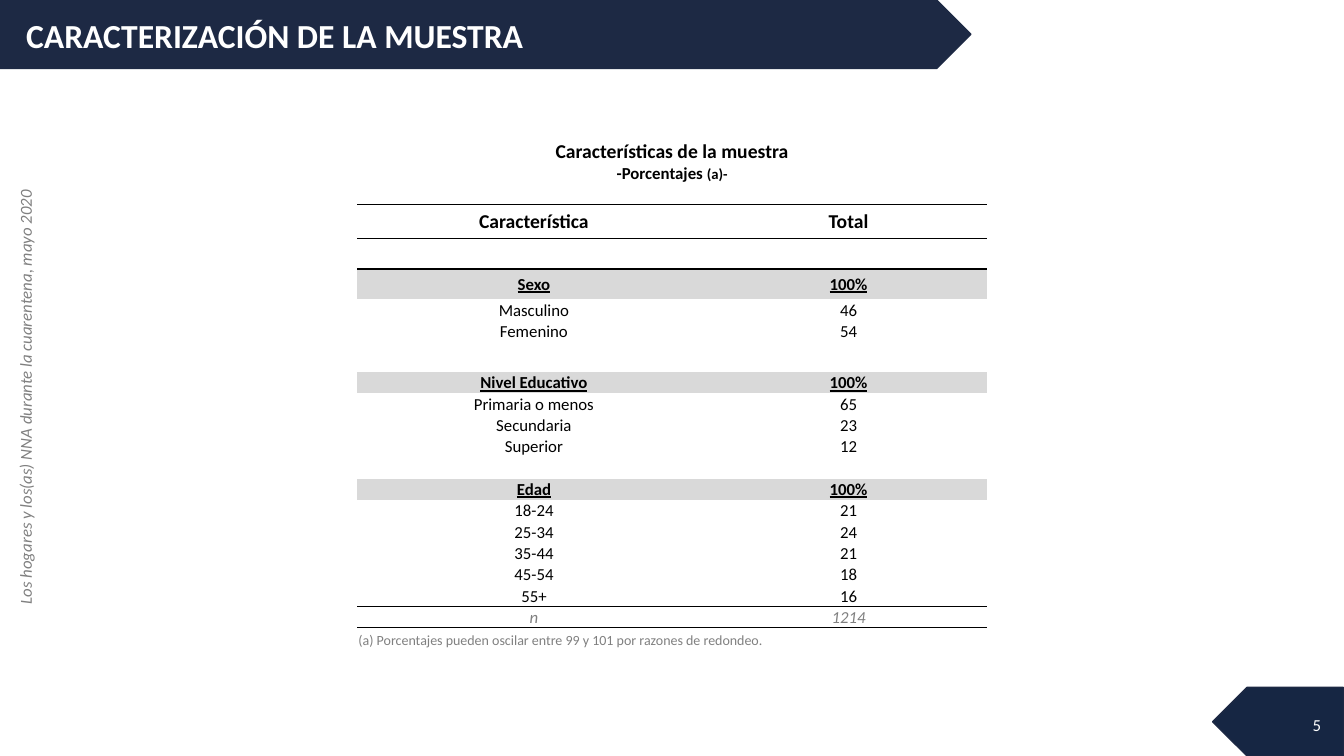
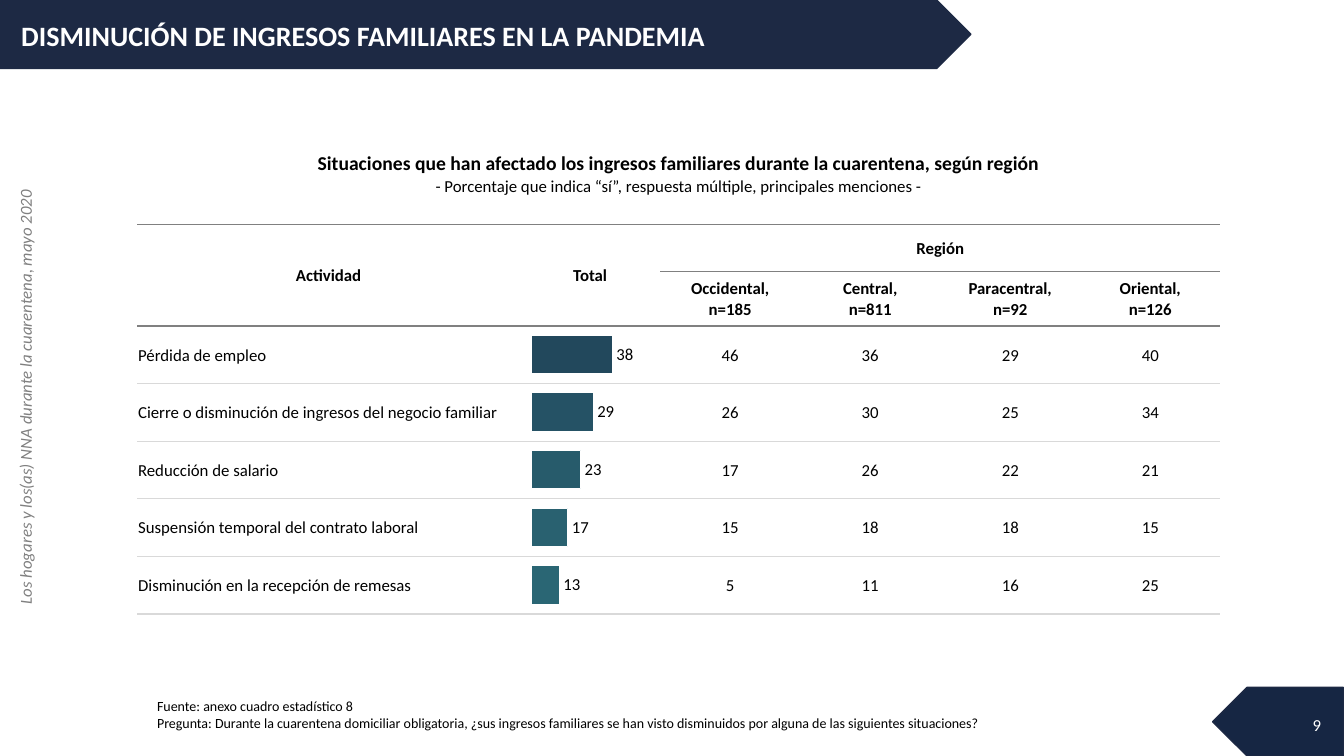
from lxml.etree import SubElement
from pptx import Presentation
from pptx.chart.data import CategoryChartData
from pptx.dml.color import RGBColor
from pptx.enum.chart import XL_CHART_TYPE, XL_LABEL_POSITION
from pptx.enum.shapes import MSO_SHAPE
from pptx.enum.text import MSO_ANCHOR, MSO_AUTO_SIZE, PP_ALIGN
from pptx.oxml import parse_xml
from pptx.oxml.ns import nsdecls, qn
from pptx.util import Inches, Pt

FONT = "Calibri"
NAVY, DEEP_NAVY = "1D2944", "162643"
WHITE, BLACK, GRAY, PALE = "FFFFFF", "000000", "808080", "D9D9D9"
NO_STYLE = "{2D5ABB26-0587-4C30-8999-92F81FD0307C}"
color = RGBColor.from_string

deck = Presentation()
deck.slide_width, deck.slide_height = Inches(13.33), Inches(7.5)


def spot(left, top, width, height):
    """Turn percentages of the slide's size into lengths."""
    across, down = deck.slide_width / 100, deck.slide_height / 100
    return int(left * across), int(top * down), int(width * across), int(height * down)


def write(frame, text, size=12, ink=BLACK, align=PP_ALIGN.LEFT, bold=False, italic=False):
    """Fill a text frame, one paragraph per line of text."""
    frame.text = text
    frame.word_wrap = True
    for para in frame.paragraphs:
        para.alignment = align
        para.font.name, para.font.size = FONT, Pt(size)
        para.font.bold, para.font.italic = bold, italic
        para.font.color.rgb = color(ink)


# Pages: title, title size, left edge, number
layout = deck.slide_layouts[5]
pages = []
for title, size, left, number in [
    ("CARACTERIZACIÓN DE LA MUESTRA", 24, 1.2, "5"),
    ("DISMINUCIÓN DE INGRESOS FAMILIARES EN LA PANDEMIA", 20, 0.83, "9"),
]:
    page = deck.slides.add_slide(layout)
    pages.append(page)
    heading = page.shapes.title
    heading.left, heading.top, heading.width, heading.height = spot(left, 1.33, 70, 6.67)
    write(heading.text_frame, title, size, WHITE, bold=True)
    heading.text_frame.vertical_anchor = MSO_ANCHOR.MIDDLE
    heading.text_frame.auto_size = MSO_AUTO_SIZE.NONE
    box = page.shapes.add_textbox(*spot(76.52, 93.2, 22.51, 5.33))
    write(box.text_frame, number, 12, WHITE, PP_ALIGN.RIGHT)
    box.text_frame.vertical_anchor = MSO_ANCHOR.MIDDLE
sample_page, income_page = pages

# Bands and side caption, moved to the layout that both pages share
shared = []
for place, fill, rotation in [
    ((0, 0, 72.24, 9.07), NAVY, 0),
    ((90.23, 90.93, 9.72, 9.07), DEEP_NAVY, 180),
]:
    band = sample_page.shapes.add_shape(MSO_SHAPE.PENTAGON, *spot(*place))
    band.rotation = rotation
    band.shadow.inherit = False
    band.fill.solid()
    band.fill.fore_color.rgb = color(fill)
    band.line.color.rgb = color(NAVY)
    band.line.width = Pt(1)
    shared.append(band)
caption = sample_page.shapes.add_textbox(*spot(-19.28, 50.53, 42.31, 4))
caption.rotation = 270
write(caption.text_frame, "Los hogares y los(as) NNA durante la cuarentena, mayo 2020",
      12, GRAY, PP_ALIGN.CENTER, italic=True)
shared.append(caption)
for shape in shared:
    layout.shapes._spTree.append(shape._element)

# Tables: rules maps a row to the colour of the line below it
sample_rows = [
    ("Características de la muestra\n-Porcentajes ", ""),
    ("Característica", "Total"),
    ("", ""),
    ("Sexo", "100%"),
    ("Masculino", "46"),
    ("Femenino", "54"),
    ("", ""),
    ("Nivel Educativo", "100%"),
    ("Primaria o menos", "65"),
    ("Secundaria", "23"),
    ("Superior", "12"),
    ("", ""),
    ("Edad", "100%"),
    ("18-24", "21"),
    ("25-34", "24"),
    ("35-44", "21"),
    ("45-54", "18"),
    ("55+", "16"),
    ("n", "1214"),
    ("(a) Porcentajes pueden oscilar entre 99 y 101 por razones de redondeo.", ""),
]
income_rows = [
    ("Situaciones que han afectado los ingresos familiares durante la cuarentena, según región\n"
     "- Porcentaje que indica “sí”, respuesta múltiple, principales menciones -", "", "", "", "", ""),
    ("Actividad", "Total", "Región", "", "", ""),
    ("", "", "Occidental,\nn=185", "Central,\nn=811", "Paracentral,\nn=92", "Oriental,\nn=126"),
    ("Pérdida de empleo", "", "46", "36", "29", "40"),
    ("Cierre o disminución de ingresos del negocio familiar", "", "26", "30", "25", "34"),
    ("Reducción de salario", "", "17", "26", "22", "21"),
    ("Suspensión temporal del contrato laboral", "", "15", "18", "18", "15"),
    ("Disminución en la recepción de remesas", "", "5", "11", "16", "25"),
]
tables = []
for page, left, top, widths, heights, rows, merges, rules in [
    (sample_page, 26.6, 17.6, [26.26, 20.56],
     [9.47, 4.5, 4, 4, 2.82, 2.82, 4] + [2.82] * 12 + [3.2], sample_rows,
     [(0, 0, 0, 1), (19, 0, 19, 1)],
     {0: BLACK, 1: BLACK, 17: BLACK, 18: BLACK}),
    (income_page, 10.2, 19.47, [28.5] + [10.42] * 5,
     [10.2, 6.27, 7.2] + [7.62] * 5, income_rows,
     [(0, 0, 0, 5), (1, 0, 2, 0), (1, 1, 2, 1), (1, 2, 1, 5)],
     {0: GRAY, 1: GRAY, 2: GRAY, 3: PALE, 4: PALE, 5: PALE, 6: PALE, 7: PALE}),
]:
    place = spot(left, top, sum(widths), sum(heights))
    table = page.shapes.add_table(len(rows), len(widths), *place).table
    tables.append(table)
    table._tbl.tblPr.find(qn("a:tableStyleId")).text = NO_STYLE
    table.first_row = table.horz_banding = False
    for column, width in zip(table.columns, widths):
        column.width = spot(0, 0, width, 0)[2]
    for row, height in zip(table.rows, heights):
        row.height = spot(0, 0, 0, height)[3]
    for first_row, first_column, last_row, last_column in merges:
        table.cell(first_row, first_column).merge(table.cell(last_row, last_column))
    for r, texts in enumerate(rows):
        for c, text in enumerate(texts):
            cell = table.cell(r, c)
            cell.fill.background()
            cell.vertical_anchor = MSO_ANCHOR.MIDDLE
            cell.margin_left = cell.margin_right = cell.margin_top = Inches(0.01)
            cell.margin_bottom = 0
            write(cell.text_frame, text, align=PP_ALIGN.CENTER)
            if not text:
                cell.text_frame.paragraphs[0]._p.get_or_add_endParaRPr().set("sz", "1200")
            below = rules.get(r + cell.span_height - 1)
            above = None if cell.is_spanned else rules.get(r - 1)
            for edge, ink in (("lnB", below), ("lnT", above)):
                if ink:
                    cell._tc.get_or_add_tcPr().insert(0, parse_xml(
                        f'<a:{edge} {nsdecls("a")} w="12700"><a:solidFill>'
                        f'<a:srgbClr val="{ink}"/></a:solidFill></a:{edge}>'))
sample_table, income_table = tables

# Sample table: headings, section rows, total and footnote
for r, texts in enumerate(sample_rows):
    for cell in sample_table.rows[r].cells:
        font = cell.text_frame.paragraphs[0].font
        if r < 2:
            font.bold, font.size = True, Pt(14)
        elif texts[1] == "100%":
            font.bold = font.underline = True
            cell.fill.solid()
            cell.fill.fore_color.rgb = color(PALE)
        elif texts[0] == "n":
            font.italic = True
            font.color.rgb = color(GRAY)
heading_cell = sample_table.cell(0, 0)
heading_cell.margin_bottom = Inches(0.15)
subtitle = heading_cell.text_frame.paragraphs[1]
subtitle.font.bold = True
span = subtitle.add_run()
span.text = "(a)-"
span.font.size = Pt(10.5)
write(sample_table.cell(19, 0).text_frame, sample_rows[19][0], 10, GRAY)

# Income table: heading, bold column heads, activities to the left
heading_cell = income_table.cell(0, 0)
heading_cell.vertical_anchor = MSO_ANCHOR.TOP
heading_cell.margin_top = Inches(0.05)
heading_font = heading_cell.text_frame.paragraphs[0].font
heading_font.bold, heading_font.size = True, Pt(14)
for r in range(1, len(income_rows)):
    if r > 2:
        income_table.cell(r, 0).text_frame.paragraphs[0].alignment = PP_ALIGN.LEFT
        continue
    for cell in income_table.rows[r].cells:
        for para in cell.text_frame.paragraphs:
            para.font.bold = True

# Bars of the Total column
data = CategoryChartData(number_format="####")
data.categories = ["1", "2", "3", "4", "5"]
data.add_series("Series 1", [13, 17, 23, 29, 38])
chart = income_page.shapes.add_chart(
    XL_CHART_TYPE.BAR_CLUSTERED, *spot(39.53, 43.07, 11.1, 38.13), data).chart
chart.has_legend = chart.has_title = False
chart.font.name, chart.font.size = FONT, Pt(10)
chart.font.color.rgb = color(BLACK)
chart.category_axis.visible = chart.value_axis.visible = False
chart.value_axis.has_major_gridlines = False
chart.value_axis.minimum_scale, chart.value_axis.maximum_scale = 0, 70
plot = chart.plots[0]
plot.gap_width = 50
plot.vary_by_categories = False
plot.has_data_labels = True
labels = plot.data_labels
labels.show_value = True
labels.position = XL_LABEL_POSITION.OUTSIDE_END
labels.number_format, labels.number_format_is_linked = "####", False
labels.font.name, labels.font.size = FONT, Pt(12)
labels.font.color.rgb = color(BLACK)
for i, fill in enumerate(["2A6674", "296170", "275B6B", "255265", "22485C"]):
    bar = plot.series[0].points[i].format
    bar.fill.solid()
    bar.fill.fore_color.rgb = color(fill)
    bar.line.color.rgb = color(WHITE)
    bar.line.width = Pt(0.75)
plot_area = chart._chartSpace.chart.plotArea
for old_layout in plot_area.findall(qn("c:layout")):
    plot_area.remove(old_layout)
plot_layout = parse_xml(f'<c:layout {nsdecls("c")}><c:manualLayout/></c:layout>')
for tag, value in [("layoutTarget", "inner"), ("xMode", "edge"), ("yMode", "edge"),
                   ("x", "0"), ("y", "0"), ("w", "1"), ("h", "1")]:
    SubElement(plot_layout[0], qn(f"c:{tag}")).set("val", value)
plot_area.insert(0, plot_layout)

source = income_page.shapes.add_textbox(*spot(10.95, 91.6, 78.24, 5.87))
write(source.text_frame,
      "Fuente: anexo cuadro estadístico 8\n"
      "Pregunta: Durante la cuarentena domiciliar obligatoria, ¿sus ingresos familiares "
      "se han visto disminuidos por alguna de las siguientes situaciones?", 10)

deck.save("out.pptx")
